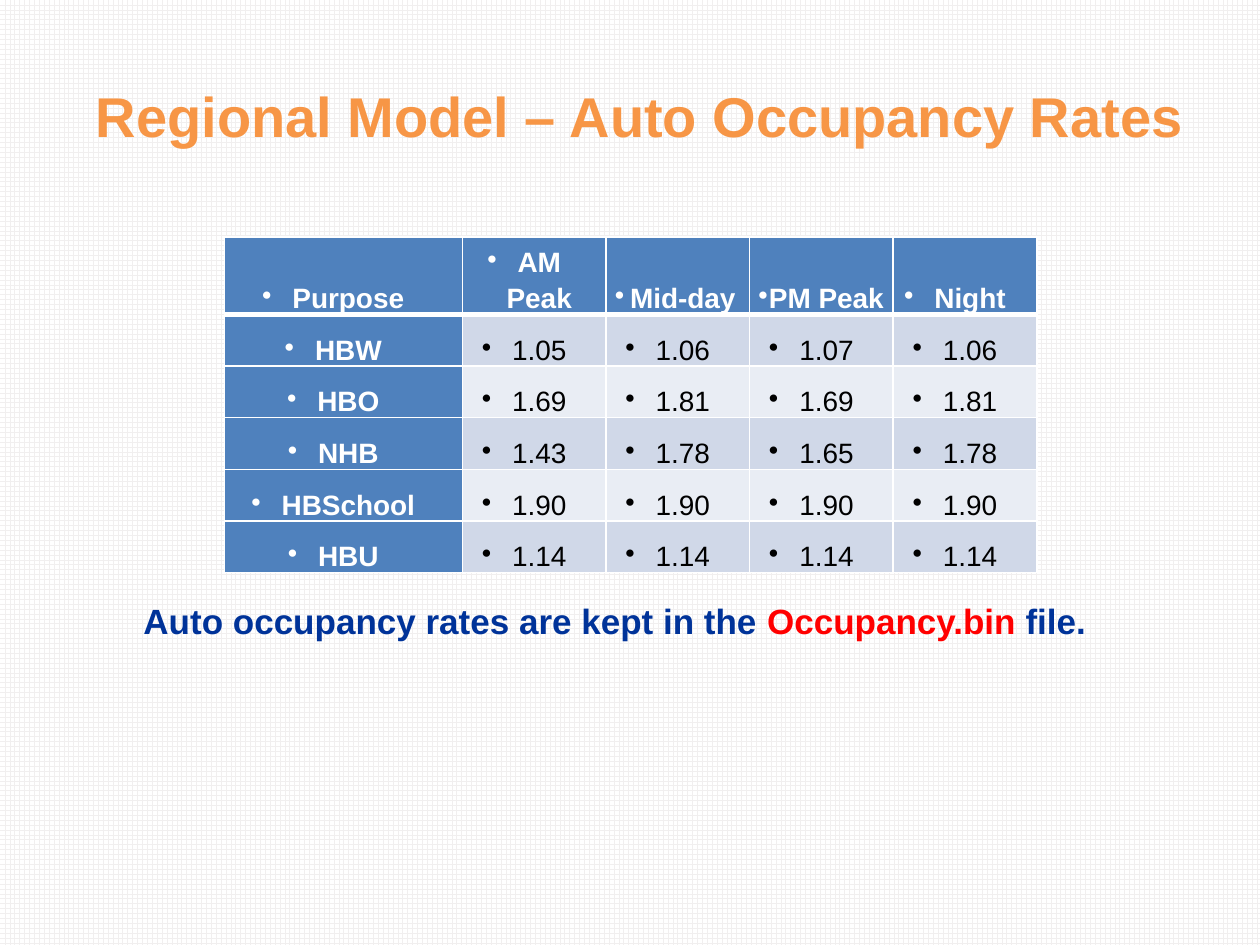
import pptx
import pptx.util
import pptx.dml.color
import pptx.enum.dml
import pptx.enum.text
import pptx.oxml
import pptx.oxml.ns

WIDE, HIGH = 10, 7.5
HEAD = ["Purpose", "AM Peak", "Mid-day", "PM Peak", "Night"]
RATES = [
    ["HBW", "1.05", "1.06", "1.07", "1.06"],
    ["HBO", "1.69", "1.81", "1.69", "1.81"],
    ["NHB", "1.43", "1.78", "1.65", "1.78"],
    ["HBSchool", "1.90", "1.90", "1.90", "1.90"],
    ["HBU", "1.14", "1.14", "1.14", "1.14"],
]


def tint(code):
    return pptx.dml.color.RGBColor.from_string(code)


def inch(size):
    return pptx.util.Inches(size)


class Deck:
    face = "Arial"
    white, blue, navy = "FFFFFF", "4F81BD", "003399"
    bands = ["D0D8E8", "E9EDF4"]

    def __init__(self):
        self.file = pptx.Presentation()
        self.file.slide_width = inch(WIDE)
        self.file.slide_height = inch(HIGH)
        self.slide = self.file.slides.add_slide(self.file.slide_layouts[6])

    def ground(self, front, back):
        fill = self.slide.background.fill
        fill.patterned()
        fill.pattern = pptx.enum.dml.MSO_PATTERN.LARGE_GRID
        fill.fore_color.rgb = tint(front)
        fill.back_color.rgb = tint(back)

    def style(self, font, size, color, bold=True):
        font.name = self.face
        font.size = pptx.util.Pt(size)
        font.bold = bold
        font.color.rgb = tint(color)

    def text(self, left, top, wide, high, parts, size, wrap=True):
        box = self.slide.shapes.add_textbox(
            inch(left * WIDE), inch(top * HIGH), inch(wide * WIDE), inch(high * HIGH))
        frame = box.text_frame
        frame.word_wrap = wrap
        frame.auto_size = pptx.enum.text.MSO_AUTO_SIZE.SHAPE_TO_FIT_TEXT
        para = frame.paragraphs[0]
        for words, color in parts:
            run = para.add_run()
            run.text = words
            self.style(run.font, size, color)
        if not wrap:
            frame.vertical_anchor = pptx.enum.text.MSO_ANCHOR.MIDDLE
            para.alignment = pptx.enum.text.PP_ALIGN.CENTER

    def bullet(self, para):
        props = para._p.get_or_add_pPr()
        props.set("marL", str(inch(0.08)))
        props.set("indent", str(inch(-0.24)))
        mark = pptx.oxml.parse_xml(
            f'<a:buChar {pptx.oxml.ns.nsdecls("a")} char="•"/>')
        props.append(mark)

    def edges(self, cell, base):
        props = cell._tc.get_or_add_tcPr()
        for side, width in zip("LRTB", [1, 1, 1, base]):
            props.append(pptx.oxml.parse_xml(
                f'<a:ln{side} {pptx.oxml.ns.nsdecls("a")} w="{pptx.util.Pt(width)}">'
                f'<a:solidFill><a:srgbClr val="{self.white}"/></a:solidFill></a:ln{side}>'))

    def cell(self, cell, words, fill, color, bold, base):
        self.edges(cell, base)
        cell.fill.solid()
        cell.fill.fore_color.rgb = tint(fill)
        cell.margin_left = cell.margin_right = inch(0.07)
        cell.margin_top = cell.margin_bottom = 0
        cell.vertical_anchor = pptx.enum.text.MSO_ANCHOR.BOTTOM
        cell.text = words
        para = cell.text_frame.paragraphs[0]
        self.bullet(para)
        para.alignment = pptx.enum.text.PP_ALIGN.CENTER
        para.line_spacing = 1.15
        self.style(para.font, 16, color, bold)

    def table(self, left, top, cols, step, rows):
        grid = self.slide.shapes.add_table(
            len(rows), len(cols), inch(left * WIDE), inch(top * HIGH),
            inch(sum(cols)), inch(step * len(rows))).table
        grid.horz_banding = False
        for col, wide in zip(grid.columns, cols):
            col.width = inch(wide)
        for r, row in enumerate(rows):
            grid.rows[r].height = inch(step)
            for c, words in enumerate(row):
                head = r == 0 or c == 0
                fill = self.blue if head else self.bands[(r - 1) % 2]
                color = self.white if head else "000000"
                self.cell(grid.cell(r, c), words, fill, color, head, 1 if r else 3)


def main():
    deck = Deck()
    deck.ground("F1EFEF", "FFFFFF")
    deck.text(0.063, 0.079, 0.89, 0.085,
              [("Regional Model – Auto Occupancy Rates", "F79646")], 32, False)
    deck.text(0.104, 0.628, 0.833, 0.058, [
        ("Auto occupancy rates are kept in the ", deck.navy),
        ("Occupancy.bin", "FF0000"),
        (" file.", deck.navy)], 20)
    deck.table(0.178, 0.251, [1.89] + [1.14] * 4, 0.41, [HEAD] + RATES)
    deck.file.save("out.pptx")


if __name__ == "__main__":
    main()
